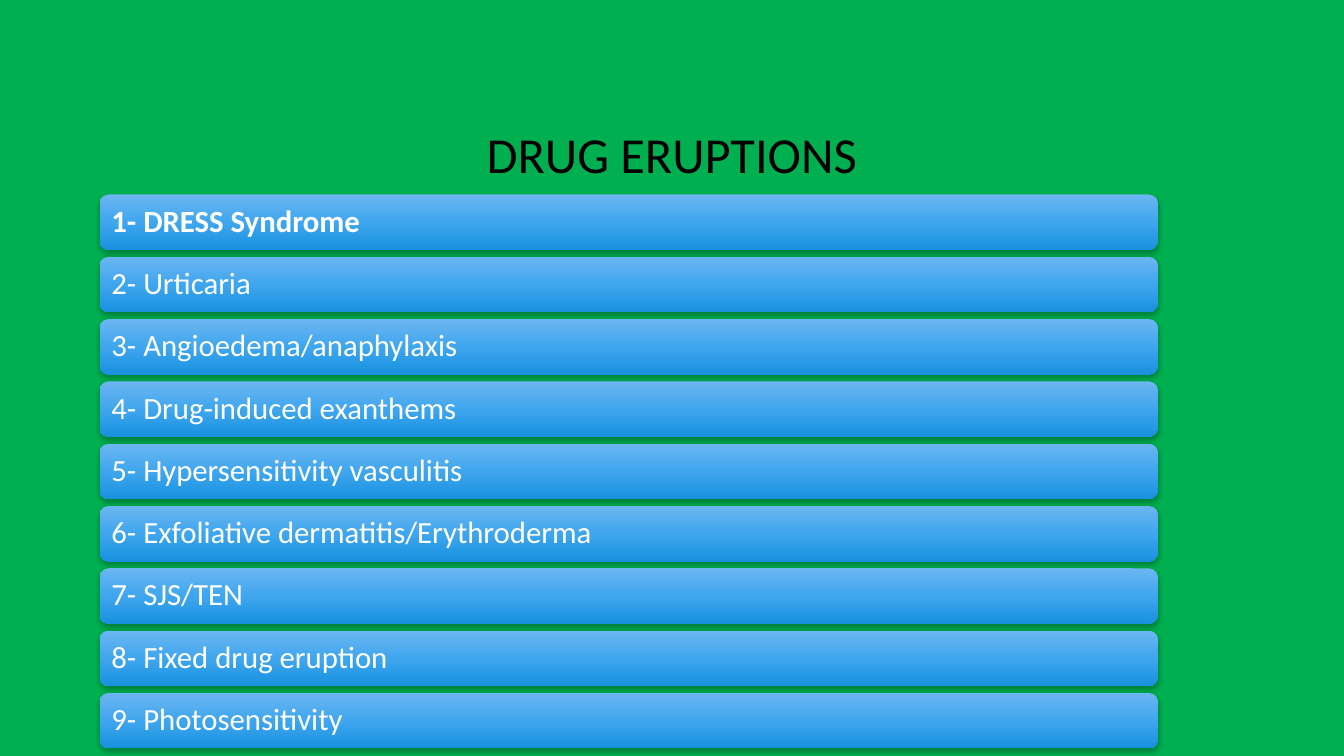
import copy
from dataclasses import dataclass

import pptx
import pptx.dml.color
import pptx.enum.shapes
import pptx.enum.text
import pptx.oxml
import pptx.oxml.ns
import pptx.util
from pptx.util import Cm


@dataclass
class Theme:
    back: str = "00B050"
    dark: str = "000000"
    light: str = "FFFFFF"
    blues: tuple = ((0, "6CB6F1"), (0.5, "3FA6EE"), (1, "1891DF"))
    face: str = "Calibri"
    head: int = 36
    item: int = 22


theme = Theme()
rgb = pptx.dml.color.RGBColor.from_string
qn = pptx.oxml.ns.qn
align = pptx.enum.text.PP_ALIGN
middle = pptx.enum.text.MSO_ANCHOR.MIDDLE

SHADOW = (
    f'<a:outerShdw {pptx.oxml.ns.nsdecls("a")} blurRad="50800" dist="25400" '
    'dir="5400000" algn="ctr" rotWithShape="0">'
    f'<a:srgbClr val="{theme.dark}"><a:alpha val="28000"/></a:srgbClr></a:outerShdw>'
)


def write(frame, text, size, color, side):
    frame.word_wrap = True
    frame.vertical_anchor = middle
    frame.text = text
    para = frame.paragraphs[0]
    para.alignment = side
    para.line_spacing = 0.9
    para.font.name = theme.face
    para.font.size = pptx.util.Pt(size)
    para.font.color.rgb = rgb(color)
    return para


deck = pptx.Presentation()
deck.slide_width, deck.slide_height = Cm(33.87), Cm(19.05)
slide = deck.slides.add_slide(deck.slide_layouts[5])
slide.background.fill.solid()
slide.background.fill.fore_color.rgb = rgb(theme.back)

title = slide.shapes.title
title.left, title.top = Cm(2.54), Cm(1.73)
title.width, title.height = Cm(28.78), Cm(4.45)
write(title.text_frame, "DRUG ERUPTIONS", theme.head, theme.dark, align.CENTER)

items = [
    "DRESS Syndrome",
    "Urticaria",
    "Angioedema/anaphylaxis",
    "Drug-induced exanthems",
    "Hypersensitivity vasculitis",
    "Exfoliative dermatitis/Erythroderma",
    "SJS/TEN",
    "Fixed drug eruption",
    "Photosensitivity",
]
left, top, width, height, pitch = 2.51, 4.9, 26.67, 1.4, 1.57

group = slide.shapes.add_group_shape()
for row, item in enumerate(items):
    bar = group.shapes.add_shape(
        pptx.enum.shapes.MSO_SHAPE.ROUNDED_RECTANGLE,
        Cm(left), Cm(top + row * pitch), Cm(width), Cm(height),
    )
    bar.line.fill.background()

    bar.fill.gradient()
    bar.fill.gradient_angle = 270
    stops = next(bar.element.iter(qn("a:gsLst")))
    stops.insert(1, copy.deepcopy(stops[0]))
    for stop, (place, color) in zip(bar.fill.gradient_stops, theme.blues):
        stop.position = place
        stop.color.rgb = rgb(color)

    bar.shadow.inherit = False
    effects = next(bar.element.iter(qn("a:effectLst")))
    effects.append(pptx.oxml.parse_xml(SHADOW))

    frame = bar.text_frame
    frame.margin_left = frame.margin_right = Cm(0.23)
    frame.margin_top = frame.margin_bottom = Cm(0.23)
    para = write(frame, f"{row + 1}- {item}", theme.item, theme.light, align.LEFT)
    para.font.bold = row == 0

deck.save("out.pptx")
